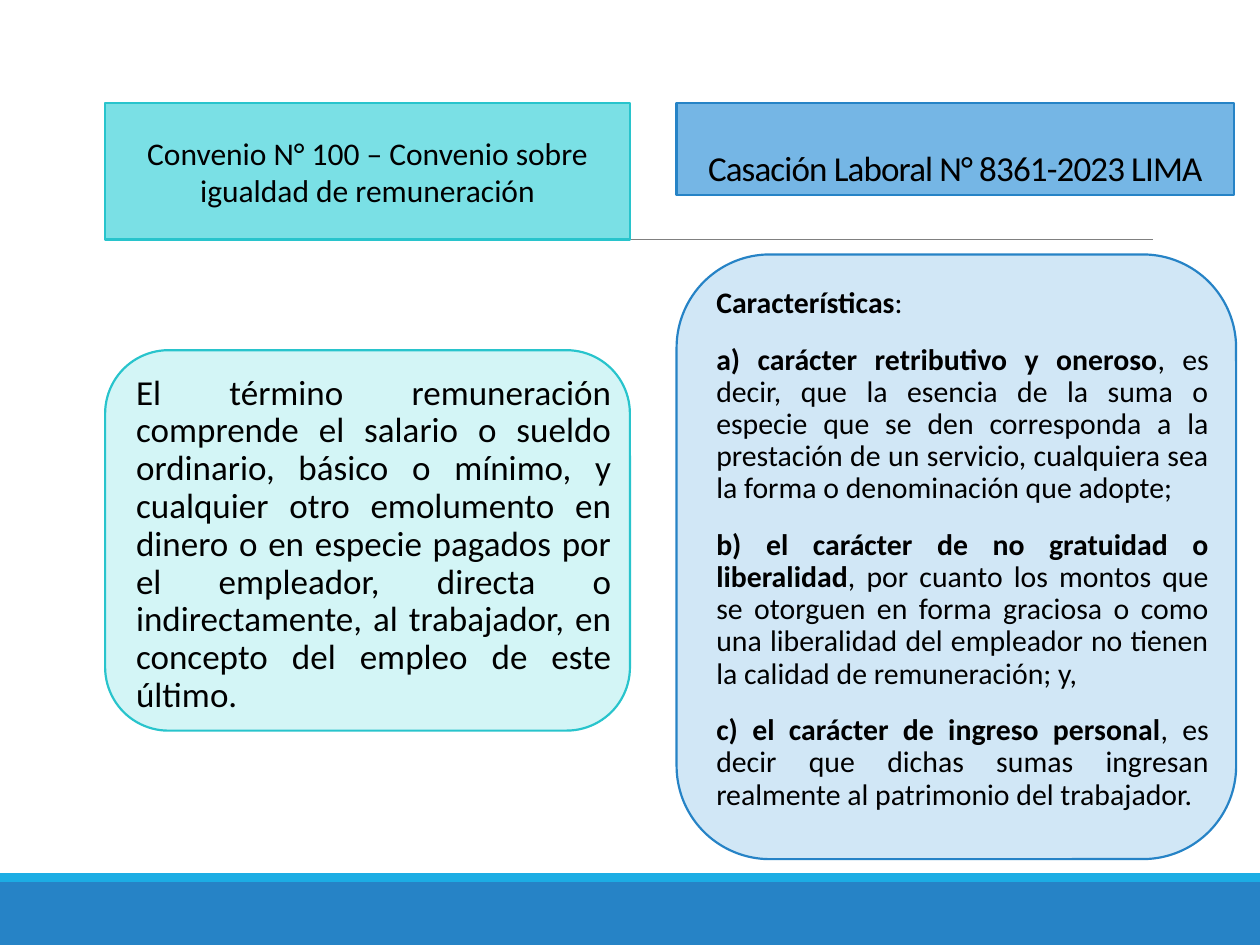
from pptx import Presentation
from pptx.dml.color import RGBColor
from pptx.enum.shapes import MSO_CONNECTOR, MSO_SHAPE
from pptx.enum.text import MSO_ANCHOR, PP_ALIGN
from pptx.oxml.ns import qn
from pptx.util import Cm, Pt
from lxml import etree

RECT, ROUND = MSO_SHAPE.RECTANGLE, MSO_SHAPE.ROUNDED_RECTANGLE
TOP, MIDDLE, BOTTOM = MSO_ANCHOR.TOP, MSO_ANCHOR.MIDDLE, MSO_ANCHOR.BOTTOM
CENTER, JUSTIFY = PP_ALIGN.CENTER, PP_ALIGN.JUSTIFY

THEME = {
    "font": "Calibri",
    "text": "000000",
    "rule": "808080",
    "band": "2683C6",
    "stripe": "1CADE4",
    "blue": {"head": "75B6E5", "body": "D1E7F6", "line": "2683C6"},
    "teal": {"head": "7AE0E5", "body": "D3F5F6", "line": "28C4CC"},
    "head_size": 18,
    "title_size": 20,
    "definition_size": 20,
    "features_size": 17,
}

CONVENTION = "Convenio N° 100 – Convenio sobre igualdad de remuneración"
RULING = "Casación Laboral N° 8361-2023 LIMA"
DEFINITION = [
    ("", "El término remuneración comprende el salario o sueldo ordinario, básico o mínimo, "
         "y cualquier otro emolumento en dinero o en especie pagados por el empleador, directa "
         "o indirectamente, al trabajador, en concepto del empleo de este último."),
]
FEATURES = [
    ("Características", ":"),
    ("a) carácter retributivo y oneroso",
     ", es decir, que la esencia de la suma o especie que se den corresponda a la prestación "
     "de un servicio, cualquiera sea la forma o denominación que adopte;"),
    ("b) el carácter de no gratuidad o liberalidad",
     ", por cuanto los montos que se otorguen en forma graciosa o como una liberalidad del "
     "empleador no tienen la calidad de remuneración; y,"),
    ("c) el carácter de ingreso personal",
     ", es decir que dichas sumas ingresan realmente al patrimonio del trabajador."),
]

SLIDE_W, SLIDE_H = 25.4, 19.05
BAND_H, STRIPE_H = 1.27, 0.18
LEFT_X, RIGHT_X, HEAD_Y = 2.12, 13.64, 2.08
RULE_Y = 4.83


def add_box(s, kind, box, fill, line=None):
    sp = s.shapes.add_shape(kind, *map(Cm, box))
    sp.shadow.inherit = False
    sp.fill.solid()
    sp.fill.fore_color.rgb = RGBColor.from_string(fill)
    if line:
        sp.line.color.rgb = RGBColor.from_string(line)
        sp.line.width = Pt(1.25)
    else:
        sp.line.fill.background()
    return sp


def add_run(p, text, size, bold=False):
    r = p.add_run()
    r.text = text
    r.font.name = THEME["font"]
    r.font.size = Pt(size)
    r.font.bold = bold
    r.font.color.rgb = RGBColor.from_string(THEME["text"])
    return r


def add_head(s, box, colors, text, size, anchor):
    sp = add_box(s, RECT, box, colors["head"], colors["line"])
    tf = sp.text_frame
    tf.word_wrap = True
    tf.vertical_anchor = anchor
    p = tf.paragraphs[0]
    p.alignment = CENTER
    return p, add_run(p, text, size)


def add_body(s, box, colors, items, size):
    sp = add_box(s, ROUND, box, colors["body"], colors["line"])
    tf = sp.text_frame
    tf.word_wrap = True
    tf.vertical_anchor = TOP
    tf.margin_left = tf.margin_right = 0
    for i, (lead, rest) in enumerate(items):
        p = tf.add_paragraph() if i else tf.paragraphs[0]
        p.alignment = JUSTIFY
        p.line_spacing = 0.9
        p.space_before, p.space_after = Pt(12), Pt(2)
        p._p.get_or_add_pPr().set("marL", str(Cm(0.25)))
        if lead:
            add_run(p, lead, size, True)
        add_run(p, rest, size)


def add_rule(s, x1, x2, y):
    line = s.shapes.add_connector(MSO_CONNECTOR.STRAIGHT, Cm(x1), Cm(y), Cm(x2), Cm(y))
    line.line.color.rgb = RGBColor.from_string(THEME["rule"])
    line.line.width = Pt(0.5)
    etree.SubElement(line._element.spPr, qn("a:effectLst"))


def main():
    prs = Presentation()
    prs.slide_width, prs.slide_height = Cm(SLIDE_W), Cm(SLIDE_H)
    s = prs.slides.add_slide(prs.slide_layouts[6])

    band_y = SLIDE_H - BAND_H
    add_box(s, RECT, (0, band_y, SLIDE_W, BAND_H), THEME["band"])
    add_box(s, RECT, (0, band_y - STRIPE_H, SLIDE_W, STRIPE_H), THEME["stripe"])
    add_rule(s, 2.49, 23.24, RULE_Y)

    blue, teal = THEME["blue"], THEME["teal"]
    p, r = add_head(s, (RIGHT_X, HEAD_Y, 11.23, 1.85), blue, RULING,
                    THEME["title_size"], BOTTOM)
    p.line_spacing = 0.85
    r.font._element.set("spc", "-50")
    add_body(s, (RIGHT_X, 5.13, 11.28, 12.19), blue, FEATURES, THEME["features_size"])
    add_body(s, (LEFT_X, 7.06, 10.58, 7.67), teal, DEFINITION, THEME["definition_size"])
    add_head(s, (LEFT_X, HEAD_Y, 10.58, RULE_Y - HEAD_Y), teal, CONVENTION,
             THEME["head_size"], MIDDLE)

    prs.save("out.pptx")


if __name__ == "__main__":
    main()
